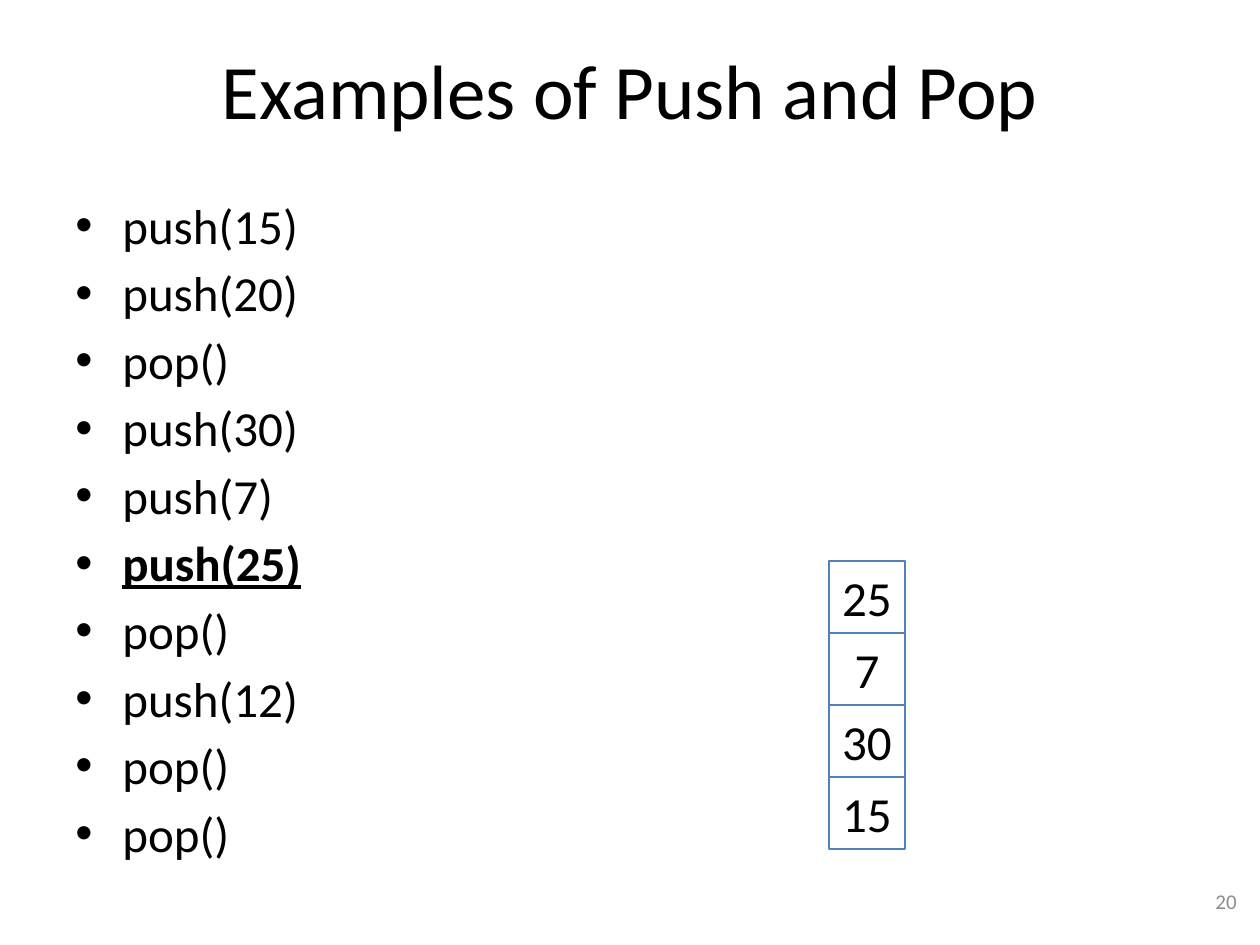
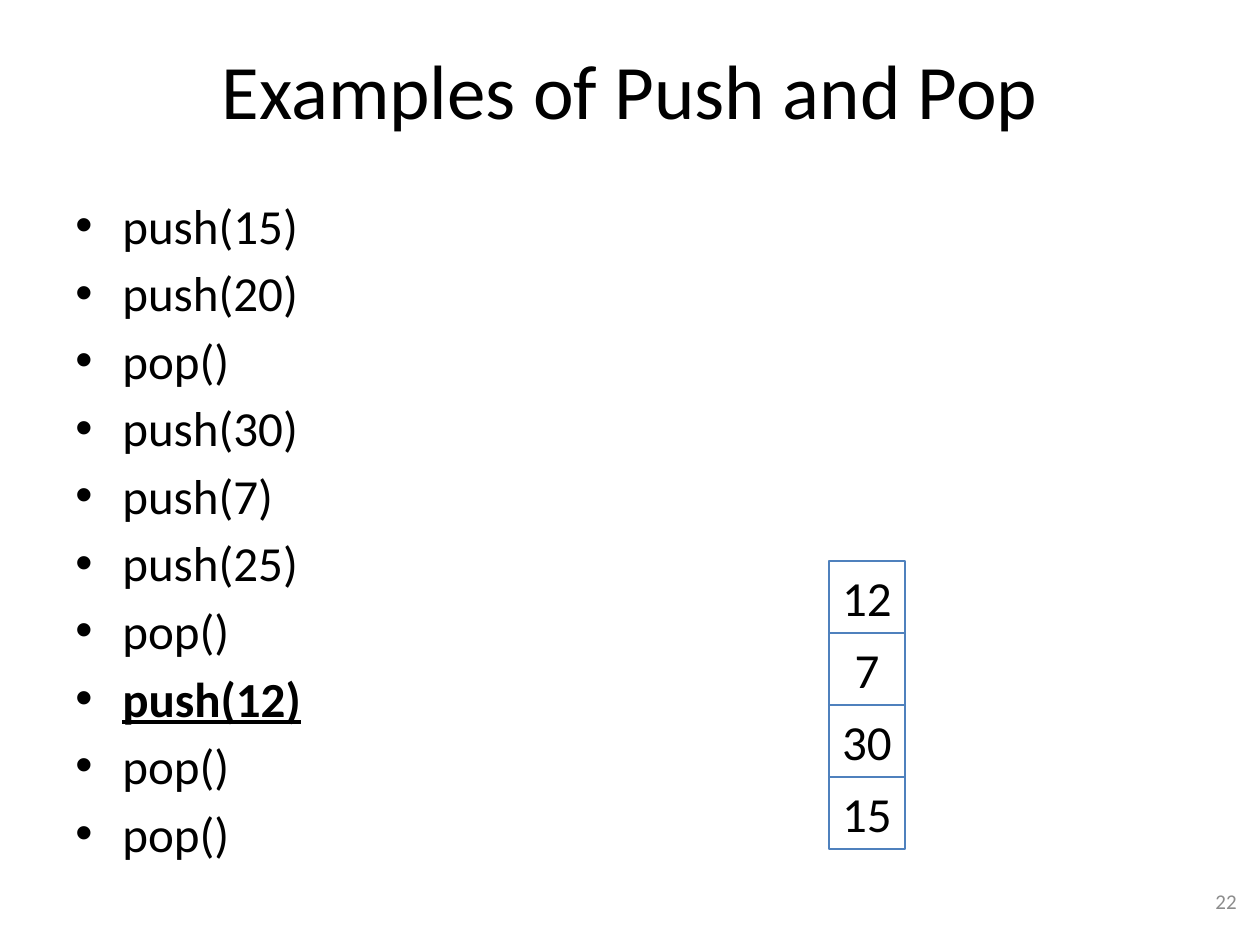
from lxml.etree import SubElement
from pptx import Presentation
from pptx.dml.color import RGBColor
from pptx.enum.shapes import MSO_SHAPE as SHAPE
from pptx.enum.text import MSO_ANCHOR as ANCHOR, MSO_AUTO_SIZE as FIT, PP_ALIGN as ALIGN
from pptx.oxml.ns import qn
from pptx.util import Emu, Pt

SCALE = 914400 / 126
FONT = "Calibri"
COLORS = {"text": "000000", "number": "8C8C8C", "cell": "4F81BD"}
TITLE = "Examples of Push and Pop"
CALLS = ["push(15)", "push(20)", "pop()", "push(30)", "push(7)",
         "push(25)", "pop()", "push(12)", "pop()", "pop()"]
STEPS = [
    {"current": 5, "stack": ["15", "30", "7", "25"], "number": "20"},
    {"current": 7, "stack": ["15", "30", "7", "12"], "number": "22"},
]
CELL_LEFT, CELL_WIDTH, CELL_HEIGHT, STACK_BOTTOM = 829, 76, 72, 849


def px(n):
    """Turn pixels into EMU."""
    return Emu(round(n * SCALE))


def color(name):
    """Look up a named colour."""
    return RGBColor.from_string(COLORS[name])


def write(p, text, size=28, fill="text", align=ALIGN.LEFT, bold=False, underline=False):
    """Write formatted text into a paragraph."""
    p.alignment = align
    r = p.add_run()
    r.text = text
    r.font.name, r.font.size = FONT, Pt(size)
    r.font.bold, r.font.underline = bold, underline
    r.font.color.rgb = color(fill)


def add_box(slide, left, top, width, height, anchor=ANCHOR.MIDDLE):
    """Add a wrapping text box and return its text frame."""
    sp = slide.shapes.add_textbox(px(left), px(top), px(width), px(height))
    tf = sp.text_frame
    tf.word_wrap = True
    tf.vertical_anchor = anchor
    return tf


def add_bullet(p, indent):
    """Give a paragraph a hanging bullet."""
    pPr = p._p.get_or_add_pPr()
    pPr.set("marL", str(px(indent)))
    pPr.set("indent", str(px(-indent)))
    SubElement(pPr, qn("a:buFont"), typeface="Arial")
    SubElement(pPr, qn("a:buChar"), char="•")


def add_calls(slide, current):
    """List the calls, with the current one emphasised."""
    tf = add_box(slide, 63, 189, 462, 693, ANCHOR.TOP)
    for i, call in enumerate(CALLS):
        p = tf.add_paragraph() if i else tf.paragraphs[0]
        p.space_before = Pt(5)
        add_bullet(p, 47)
        write(p, call, bold=i == current, underline=i == current)


def add_cell(slide, value, top):
    """Draw one outlined cell of the stack."""
    sp = slide.shapes.add_shape(SHAPE.RECTANGLE, px(CELL_LEFT), px(top),
                                px(CELL_WIDTH), px(CELL_HEIGHT))
    sp.shadow.inherit = False
    sp.fill.background()
    sp.line.color.rgb = color("cell")
    sp.line.width = Pt(1.5)
    tf = sp.text_frame
    tf.word_wrap = False
    tf.auto_size = FIT.SHAPE_TO_FIT_TEXT
    tf.vertical_anchor = ANCHOR.TOP
    write(tf.paragraphs[0], value, align=ALIGN.CENTER)


def add_stack(slide, values):
    """Pile up the cells from the bottom."""
    for level, value in enumerate(values, start=1):
        add_cell(slide, value, STACK_BOTTOM - level * CELL_HEIGHT)


def add_step(prs, current, stack, number):
    """Build the slide for one step of the example."""
    slide = prs.slides.add_slide(prs.slide_layouts[6])
    title = add_box(slide, 63, 10, 1134, 158)
    write(title.paragraphs[0], TITLE, size=44, align=ALIGN.CENTER)
    add_calls(slide, current)
    footer = add_box(slide, 955, 876, 294, 50)
    write(footer.paragraphs[0], number, size=12, fill="number", align=ALIGN.RIGHT)
    add_stack(slide, stack)


def main():
    """Build and save the presentation."""
    prs = Presentation()
    prs.slide_width, prs.slide_height = px(1260), px(945)
    for step in STEPS:
        add_step(prs, **step)
    prs.save("out.pptx")


if __name__ == "__main__":
    main()
